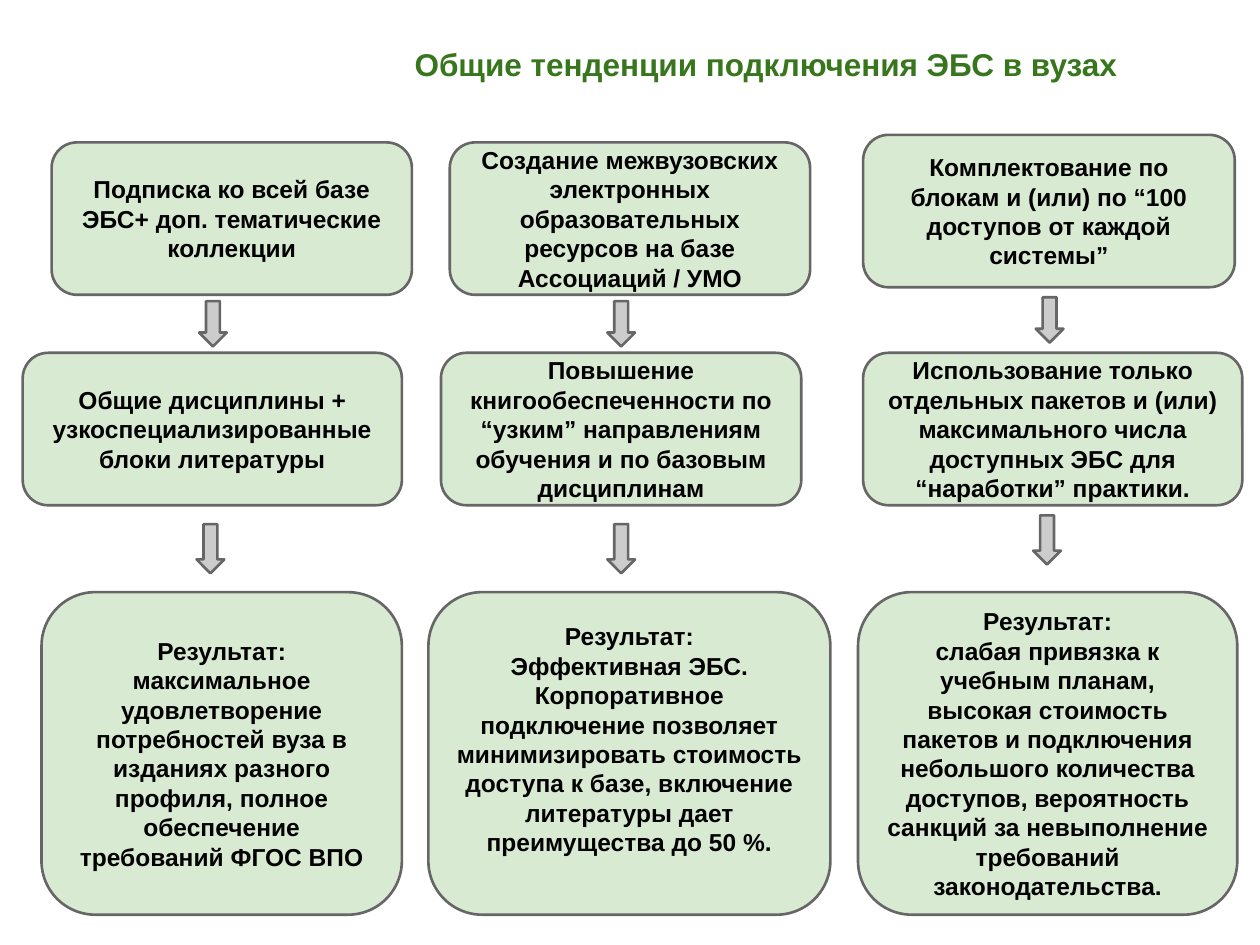
from pptx import Presentation
from pptx.dml.color import RGBColor
from pptx.enum.shapes import MSO_SHAPE
from pptx.enum.text import MSO_ANCHOR, MSO_AUTO_SIZE, PP_ALIGN
from pptx.util import Inches, Pt

GREEN = RGBColor(0x38, 0x76, 0x1D)
PALE_GREEN = RGBColor(0xD9, 0xEA, 0xD3)
GRAY = RGBColor(0x66, 0x66, 0x66)
LIGHT_GRAY = RGBColor(0xCC, 0xCC, 0xCC)
BLACK = RGBColor(0, 0, 0)
ROUNDED = MSO_SHAPE.ROUNDED_RECTANGLE
ARROW = MSO_SHAPE.DOWN_ARROW
TOP, MIDDLE = MSO_ANCHOR.TOP, MSO_ANCHOR.MIDDLE
LEFT, CENTER = PP_ALIGN.LEFT, PP_ALIGN.CENTER
NO_AUTOFIT = MSO_AUTO_SIZE.NONE

TITLE = "Общие тенденции подключения ЭБС в вузах"
BOX_HEIGHT, RESULT_HEIGHT = 1.21, 2.56
BOX_TOP, RESULT_TOP = 2.8, 4.7

# left, top, width, height, paragraphs, bottom inset
BOXES = [
    (0.41, 1.13, 2.86, BOX_HEIGHT,
     ["Подписка ко всей базе ЭБС+ доп. тематические коллекции"], 0.1),
    (3.57, 1.13, 2.86, BOX_HEIGHT,
     ["Создание межвузовских электронных образовательных ресурсов на базе "
      "Ассоциаций / УМО"], 0.1),
    (6.85, 1.07, 2.95, BOX_HEIGHT,
     ["Комплектование по блокам и (или) по “100 доступов от каждой системы”"], 0.1),
    (0.18, BOX_TOP, 3.01, BOX_HEIGHT,
     ["Общие дисциплины + узкоспециализированные блоки литературы"], 0.1),
    (3.5, BOX_TOP, 2.86, BOX_HEIGHT,
     ["Повышение книгообеспеченности по “узким” направлениям обучения "
      "и по базовым дисциплинам"], 0.1),
    (6.85, BOX_TOP, 3.01, BOX_HEIGHT,
     ["Использование только отдельных пакетов и (или) максимального числа "
      "доступных ЭБС для “наработки” практики."], 0.1),
    (0.33, RESULT_TOP, 2.86, RESULT_HEIGHT,
     ["Результат:",
      "максимальное удовлетворение потребностей вуза в изданиях разного "
      "профиля, полное обеспечение требований ФГОС ВПО"], 0.1),
    (3.4, RESULT_TOP, 3.19, RESULT_HEIGHT,
     ["Результат:",
      "Эффективная ЭБС. Корпоративное подключение позволяет минимизировать "
      "стоимость доступа к базе, включение литературы дает преимущества "
      "до 50 %."], 0.33),
    (6.81, RESULT_TOP, 3.01, RESULT_HEIGHT,
     ["Результат:",
      "слабая привязка к учебным планам, высокая стоимость пакетов и "
      "подключения небольшого количества доступов, вероятность санкций за "
      "невыполнение требований законодательства."], 0.1),
]

# left, top, height
ARROWS = [
    (1.58, 2.39, 0.36), (4.82, 2.39, 0.36), (8.22, 2.36, 0.36),
    (1.56, 4.16, 0.39), (4.82, 4.16, 0.39), (8.2, 4.09, 0.39),
]


def write_text(tf, paragraphs, size=14, color=BLACK, align=CENTER,
               anchor=MIDDLE, bottom=0.1):
    tf.word_wrap = True
    tf.auto_size = NO_AUTOFIT
    tf.vertical_anchor = anchor
    tf.margin_left = tf.margin_right = tf.margin_top = Inches(0.1)
    tf.margin_bottom = Inches(bottom)
    for i, text in enumerate(paragraphs):
        p = tf.add_paragraph() if i else tf.paragraphs[0]
        p.alignment = align
        r = p.add_run()
        r.text = text
        r.font.name = "Arial"
        r.font.size = Pt(size)
        r.font.bold = True
        r.font.color.rgb = color


def add_title(s, text):
    sp = s.shapes.title
    sp.left, sp.top = Inches(3.19), Inches(0.26)
    sp.width, sp.height = Inches(6.67), Inches(0.84)
    write_text(sp.text_frame, [text], size=18, color=GREEN, align=LEFT, anchor=TOP)


def add_outlined_shape(s, kind, left, top, width, height, fill):
    sp = s.shapes.add_shape(kind, Inches(left), Inches(top),
                            Inches(width), Inches(height))
    sp.shadow.inherit = False
    sp.fill.solid()
    sp.fill.fore_color.rgb = fill
    sp.line.color.rgb = GRAY
    sp.line.width = Pt(1.5)
    return sp


def add_box(s, left, top, width, height, paragraphs, bottom):
    sp = add_outlined_shape(s, ROUNDED, left, top, width, height, PALE_GREEN)
    write_text(sp.text_frame, paragraphs, bottom=bottom)


def add_arrow(s, left, top, height):
    add_outlined_shape(s, ARROW, left, top, 0.22, height, LIGHT_GRAY)


def main():
    prs = Presentation()
    prs.slide_width, prs.slide_height = Inches(10), Inches(7.5)
    s = prs.slides.add_slide(prs.slide_layouts[5])
    add_title(s, TITLE)
    for box in BOXES:
        add_box(s, *box)
    for arrow in ARROWS:
        add_arrow(s, *arrow)
    prs.save("out.pptx")


if __name__ == "__main__":
    main()
